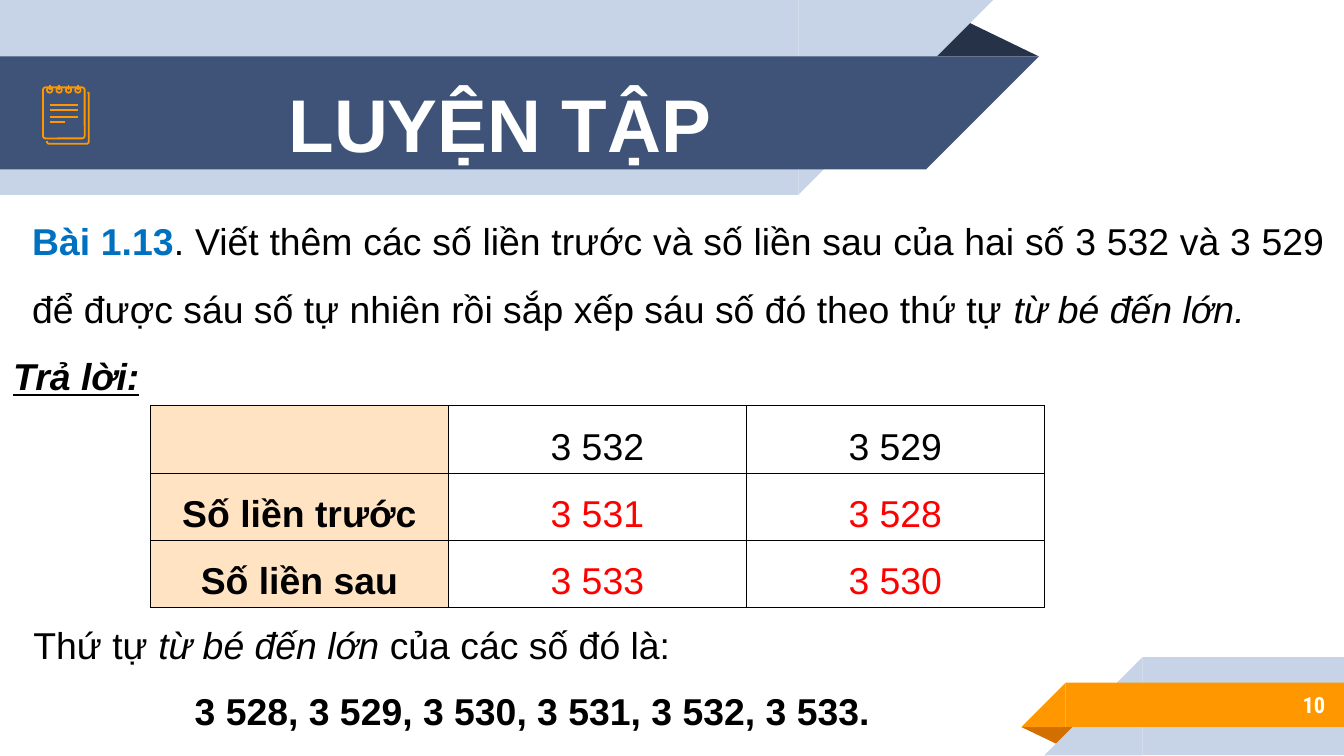
from dataclasses import dataclass

from lxml.etree import SubElement
from pptx import Presentation
from pptx.dml.color import RGBColor
from pptx.enum.shapes import MSO_CONNECTOR, MSO_SHAPE
from pptx.enum.text import MSO_ANCHOR, MSO_AUTO_SIZE, PP_ALIGN
from pptx.oxml.ns import qn
from pptx.util import Inches, Pt

COLORS = {
    "pale": "C7D3E6", "navy": "3F5378", "dark": "263248",
    "orange": "FF9800", "rust": "D26F00", "peach": "FFE3C3",
    "blue": "0070C0", "red": "FF0000", "black": "000000", "white": "FFFFFF",
}
ICON_LINE = Pt(0.96)


@dataclass
class Block:
    kind: MSO_SHAPE
    box: tuple
    color: str
    rotation: int = 0


@dataclass
class Run:
    text: str
    color: str = "black"
    bold: bool = False
    italic: bool = False
    underline: bool = False
    size: int = 20
    font: str = "Arial"


@dataclass
class Label:
    box: tuple
    runs: list
    align: PP_ALIGN = PP_ALIGN.LEFT
    spacing: float = 1.0


def rgb(name: str) -> RGBColor:
    return RGBColor.from_string(COLORS[name])


def band(x: float, y: float, width: float, height: float, color: str, top: bool) -> list:
    tip_x = x + width if top else x - height
    return [
        Block(MSO_SHAPE.RECTANGLE, (x, y, width, height), color),
        Block(MSO_SHAPE.RIGHT_TRIANGLE, (tip_x, y, height, height), color, 90 if top else 270),
    ]


def draw_block(shapes, block: Block):
    sp = shapes.add_shape(block.kind, *map(Inches, block.box))
    sp.shadow.inherit = False
    sp.rotation = block.rotation
    sp.fill.solid()
    sp.fill.fore_color.rgb = rgb(block.color)
    sp.line.fill.background()
    if block.kind == MSO_SHAPE.ISOSCELES_TRIANGLE:
        sp.adjustments[0] = 0.32


def add_run(p, run: Run):
    r = p.add_run()
    r.text = run.text
    f = r.font
    f.name, f.size = run.font, Pt(run.size)
    f.bold, f.italic, f.underline = run.bold, run.italic, run.underline
    f.color.rgb = rgb(run.color)


def draw_label(shapes, label: Label):
    tf = shapes.add_textbox(*map(Inches, label.box)).text_frame
    tf.word_wrap = True
    tf.auto_size = MSO_AUTO_SIZE.SHAPE_TO_FIT_TEXT
    p = tf.paragraphs[0]
    p.alignment, p.line_spacing = label.align, label.spacing
    for run in label.runs:
        add_run(p, run)
    return tf


def outline(sp):
    sp.shadow.inherit = False
    sp.fill.background()
    sp.line.color.rgb = rgb("orange")
    sp.line.width = ICON_LINE


def icon_line(shapes, x1: float, y1: float, x2: float, y2: float):
    cx = shapes.add_connector(MSO_CONNECTOR.STRAIGHT, *map(Inches, (x1, y1, x2, y2)))
    cx.line.color.rgb = rgb("orange")
    cx.line.width = ICON_LINE
    SubElement(cx._element.spPr, qn("a:effectLst"))


def draw_notepad(shapes):
    fb = shapes.build_freeform(35, 105, scale=Inches(0.01))
    fb.add_line_segments(
        [(35, 106), (36, 107), (37, 107), (65, 107), (66, 106), (66, 105),
         (66, 70), (66, 69), (65, 69)],
        close=False,
    )
    outline(fb.convert_to_shape())
    page = shapes.add_shape(MSO_SHAPE.ROUNDED_RECTANGLE, *map(Inches, (0.32, 0.65, 0.31, 0.38)))
    page.adjustments[0] = 0.06
    outline(page)
    for i in range(4):
        x = 0.37 + 0.07 * i
        ring = shapes.add_shape(MSO_SHAPE.OVAL, *map(Inches, (x - 0.02, 0.65, 0.04, 0.04)))
        outline(ring)
        icon_line(shapes, x, 0.63, x, 0.67)
    for y, end in ((0.78, 0.58), (0.82, 0.58), (0.87, 0.58), (0.91, 0.48)):
        icon_line(shapes, 0.37, y, end, y)


def border_cell(cell):
    tcPr = cell._tc.get_or_add_tcPr()
    for side in ("lnL", "lnR", "lnT", "lnB"):
        ln = SubElement(tcPr, qn(f"a:{side}"), w=str(Pt(0.75)))
        fill = SubElement(ln, qn("a:solidFill"))
        SubElement(fill, qn("a:srgbClr"), val=COLORS["black"])


def draw_table(shapes, rows: list):
    box = map(Inches, (1.12, 3.02, 6.65, 1.5))
    table = shapes.add_table(len(rows), len(rows[0]), *box).table
    table.first_row = table.horz_banding = False
    for i, row in enumerate(rows):
        for j, text in enumerate(row):
            cell = table.cell(i, j)
            border_cell(cell)
            cell.margin_left = cell.margin_right = Inches(0.07)
            cell.margin_top = cell.margin_bottom = 0
            if j == 0:
                cell.fill.solid()
                cell.fill.fore_color.rgb = rgb("peach")
            else:
                cell.fill.background()
            if text:
                p = cell.text_frame.paragraphs[0]
                p.alignment, p.line_spacing = PP_ALIGN.CENTER, 1.5
                p.space_before = p.space_after = Pt(6)
                add_run(p, Run(text, "red" if i and j else "black", bold=j == 0))


BLOCKS = [
    Block(MSO_SHAPE.ISOSCELES_TRIANGLE, (6.88, 0.14, 0.85, 0.28), "dark"),
    *band(0, 0, 5.94, 1.45, "pale", True),
    *band(0, 0.42, 6.89, 0.84, "navy", True),
    Block(MSO_SHAPE.ISOSCELES_TRIANGLE, (7.6, 5.41, 0.43, 0.14), "rust", 180),
    *band(8.5, 4.89, 1.5, 0.73, "pale", False),
    *band(7.93, 5.08, 2.07, 0.33, "orange", False),
]
PAGE_NUMBER = Label(
    (8.33, 5.07, 1.63, 0.35),
    [Run("10", "white", bold=True, size=12, font="Roboto Condensed")],
    PP_ALIGN.RIGHT,
)
LABELS = [
    Label((0.14, 1.41, 9.82, 1.05), [
        Run("Bài 1.13", "blue", bold=True),
        Run(". Viết thêm các số liền trước và số liền sau của hai số 3 532 và 3 529 "
            "để được sáu số tự nhiên rồi sắp xếp sáu số đó theo thứ tự "),
        Run("từ bé đến lớn.", italic=True),
    ], PP_ALIGN.JUSTIFY, 1.5),
    Label((1.35, 0.53, 4.74, 0.77), [Run("LUYỆN TẬP", "white", bold=True, size=40)],
          PP_ALIGN.CENTER),
    Label((0, 2.58, 2.81, 0.44), [Run("Trả lời:", bold=True, italic=True, underline=True)]),
    Label((0.15, 4.58, 6.42, 0.44), [
        Run("Thứ tự "), Run("từ bé đến lớn ", italic=True), Run("của các số đó là:"),
    ]),
    Label((1.35, 5.07, 6.42, 0.44),
          [Run("3 528, 3 529, 3 530, 3 531, 3 532, 3 533.", bold=True)]),
]
ROWS = [
    ["", "3 532", "3 529"],
    ["Số liền trước", "3 531", "3 528"],
    ["Số liền sau", "3 533", "3 530"],
]


def main():
    prs = Presentation()
    prs.slide_width = Inches(10)
    prs.slide_height = prs.slide_width * 9 // 16
    s = prs.slides.add_slide(prs.slide_layouts[6])
    for block in BLOCKS:
        draw_block(s.shapes, block)
    tf = draw_label(s.shapes, PAGE_NUMBER)
    tf.auto_size = MSO_AUTO_SIZE.NONE
    tf.vertical_anchor = MSO_ANCHOR.MIDDLE
    tf.margin_top = tf.margin_bottom = Inches(0.1)
    draw_notepad(s.shapes)
    for label in LABELS:
        draw_label(s.shapes, label)
    draw_table(s.shapes, ROWS)
    prs.save("out.pptx")


if __name__ == "__main__":
    main()
